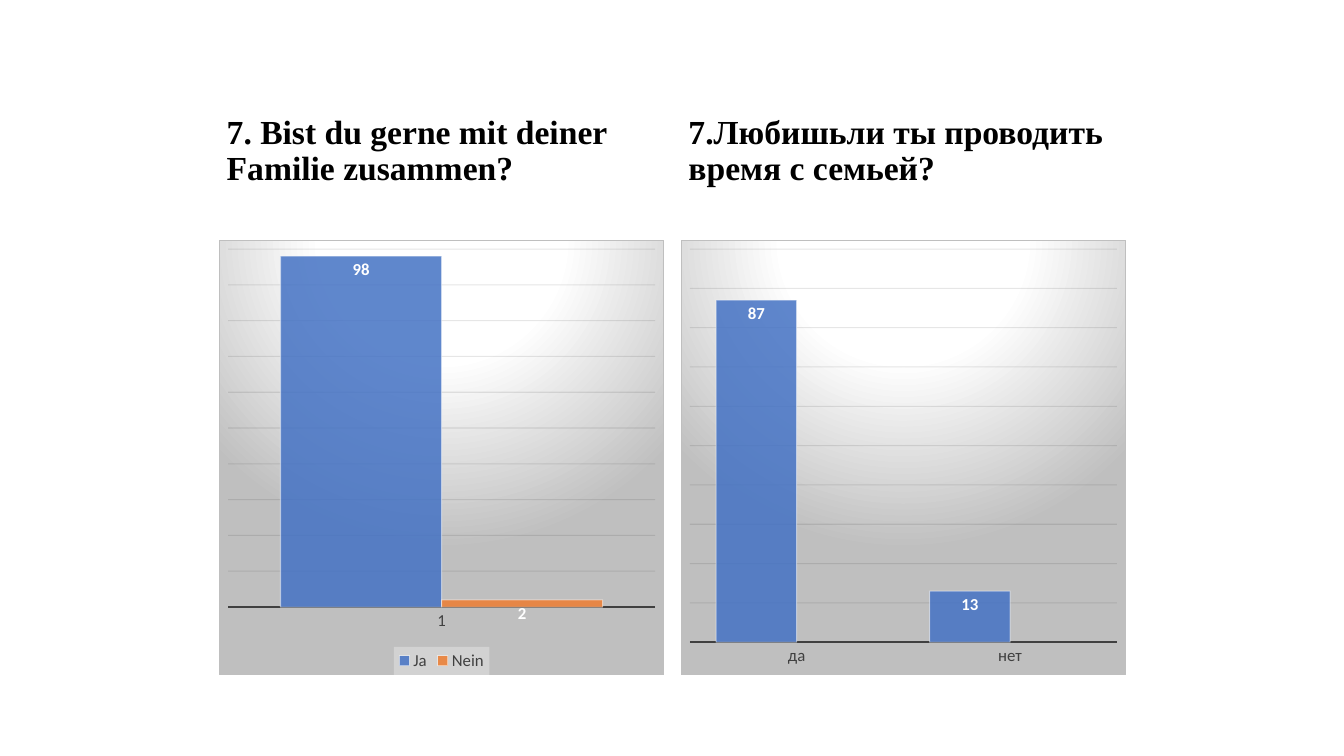
from pptx import Presentation
from pptx import util as u
from pptx.chart import data as chart_data
from pptx.dml.color import RGBColor
from pptx.enum import chart as kinds, text
from pptx.oxml import parse_xml
from pptx.oxml.ns import nsdecls, qn

SERIES_COLORS = ("4472C4", "ED7D31")
AXIS_FONT = {"name": "Calibri", "size": u.Pt(12)}
LABEL_FONT = {**AXIS_FONT, "bold": True}
TITLE_FONT = {"name": "Times New Roman", "size": u.Pt(24), "bold": True}
GRADIENT_STOPS = ((0, "FFFFFF"), (39, "FFFFFF"), (100, "BFBFBF"))


def color(value):
    return RGBColor.from_string(value)


def apply(target, values):
    for name, value in values.items():
        setattr(target, name, value)


def style_font(font, values, hex_color):
    apply(font, values)
    font.color.rgb = color(hex_color)


def style_fill(fill, hex_color, opacity):
    fill.solid()
    fill.fore_color.rgb = color(hex_color)
    tone = fill._xPr.find(qn("a:solidFill"))[0]
    tone.append(parse_xml(f'<a:alpha {nsdecls("a")} val="{opacity * 1000}"/>'))


def style_line(line, hex_color, points, opacity=100):
    line.width = u.Pt(points)
    style_fill(line.fill, hex_color, opacity)


def shape_properties(content):
    return parse_xml(f'<c:spPr {nsdecls("c", "a")}>{content}</c:spPr>')


def add_background(chart):
    stops = "".join(
        f'<a:gs pos="{place * 1000}"><a:srgbClr val="{tone}"/></a:gs>'
        for place, tone in GRADIENT_STOPS)
    chart._chartSpace.find(qn("c:chart")).addnext(shape_properties(
        f'<a:gradFill><a:gsLst>{stops}</a:gsLst><a:path path="circle">'
        '<a:fillToRect l="50000" t="-80000" r="50000" b="180000"/></a:path></a:gradFill>'
        '<a:ln w="9525"><a:solidFill><a:srgbClr val="BFBFBF"/></a:solidFill></a:ln>'))


def add_legend(chart):
    chart.has_legend = True
    legend = chart.legend
    apply(legend, {"position": kinds.XL_LEGEND_POSITION.BOTTOM, "include_in_layout": False})
    style_font(legend.font, AXIS_FONT, "404040")
    legend._element.find(qn("c:txPr")).addprevious(shape_properties(
        '<a:solidFill><a:srgbClr val="F2F2F2"><a:alpha val="39000"/></a:srgbClr></a:solidFill>'))


def style_axes(chart):
    categories, values = chart.category_axis, chart.value_axis
    apply(categories, {"major_tick_mark": kinds.XL_TICK_MARK.NONE,
                       "minor_tick_mark": kinds.XL_TICK_MARK.NONE,
                       "has_major_gridlines": False})
    style_font(categories.tick_labels.font, AXIS_FONT, "404040")
    style_line(categories.format.line, "404040", 1.5)
    apply(values, {"visible": False, "minimum_scale": 0, "maximum_scale": 100,
                   "major_unit": 10, "has_major_gridlines": True})
    style_line(values.major_gridlines.format.line, "0D0D0D", 0.75, 10)


def style_series(series, hex_color):
    style_fill(series.format.fill, hex_color, 85)
    style_line(series.format.line, "FFFFFF", 0.75, 50)
    labels = series.data_labels
    apply(labels, {"show_value": True, "position": kinds.XL_LABEL_POSITION.INSIDE_END})
    style_font(labels.font, LABEL_FONT, "FFFFFF")


def add_question(page, box, wording):
    frame = page.shapes.add_textbox(*map(u.Inches, box)).text_frame
    apply(frame, {"word_wrap": True, "vertical_anchor": text.MSO_ANCHOR.BOTTOM})
    para = frame.paragraphs[0]
    para.line_spacing = 0.9
    span = para.add_run()
    span.text = wording
    style_font(span.font, TITLE_FONT, "000000")


def add_answers(page, box, categories, answers, legend):
    data = chart_data.CategoryChartData()
    data.categories = categories
    for name, values in answers.items():
        data.add_series(name, values)
    chart = page.shapes.add_chart(
        kinds.XL_CHART_TYPE.COLUMN_CLUSTERED, *map(u.Inches, box), data).chart
    chart.has_title = False
    style_font(chart.font, {"name": "Calibri", "size": u.Pt(10)}, "000000")
    add_background(chart)
    style_axes(chart)
    plot = chart.plots[0]
    apply(plot, {"gap_width": 65, "overlap": 0, "vary_by_categories": False})
    for series, tone in zip(plot.series, SERIES_COLORS):
        style_series(series, tone)
    chart.has_legend = False
    if legend:
        add_legend(chart)


def add_survey(page, box, wording, categories, answers, legend=False):
    left, top, width, height = box
    title_height, chart_top = 1.21, 1.68
    add_question(page, (left - 0.02, top, width, title_height), wording)
    add_answers(page, (left, top + chart_top, width, height - chart_top),
                categories, answers, legend)


def main():
    deck = Presentation()
    apply(deck, {"slide_width": u.Inches(13.33), "slide_height": u.Inches(7.5)})
    page = deck.slides.add_slide(deck.slide_layouts[6])
    add_survey(page, (2.17, 0.7, 4.42, 6),
               "7. Bist du gerne mit deiner Familie zusammen?",
               ["1"], {"Ja": [98], "Nein": [2]}, legend=True)
    add_survey(page, (6.75, 0.7, 4.42, 6),
               "7.Любишьли ты проводить время с семьей?",
               ["да", "нет"], {"Series 1": [87, 13], "Series 2": [None, None]})
    deck.save("out.pptx")


if __name__ == "__main__":
    main()
